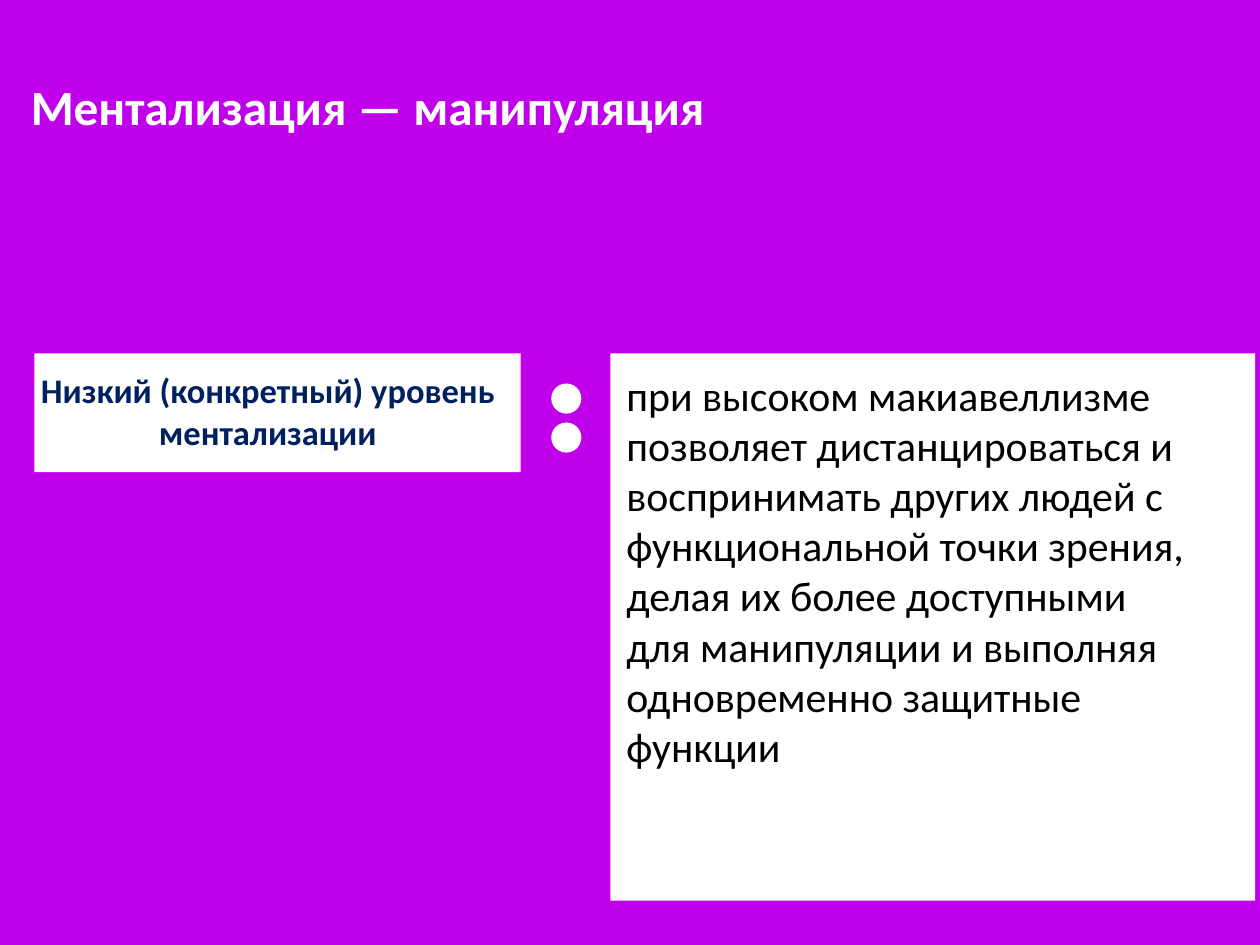
import pptx
import pptx.dml.color
import pptx.enum.shapes
import pptx.enum.text
import pptx.util
from typing import NamedTuple

COLORS = {"back": "C000EB", "white": "FFFFFF", "navy": "002060", "black": "000000"}
WIDTH, HEIGHT = 14.22, 10.67
COLS, ROWS = 128, 96
KIND = pptx.enum.shapes.MSO_SHAPE
ALIGN = pptx.enum.text.PP_ALIGN
ANCHOR = pptx.enum.text.MSO_ANCHOR


class Area(NamedTuple):
    """Place in grid columns and rows."""
    col: float
    row: float
    wide: float
    high: float


class Panel(NamedTuple):
    kind: KIND
    area: Area


class Label(NamedTuple):
    text: str
    area: Area
    size: int
    color: str
    bold: bool = False
    align: ALIGN = ALIGN.LEFT
    anchor: ANCHOR = ANCHOR.TOP
    pitch: float = 1.0


# Panels and the colon of two dots
TOP = 35.9
DOT, STEP = 3.06, 3.96
PANELS = [
    Panel(KIND.RECTANGLE, Area(3.5, TOP, 49.4, 12.06)),
    *(Panel(KIND.OVAL, Area(56, 38.96 + i * STEP, DOT, DOT)) for i in range(2)),
    Panel(KIND.RECTANGLE, Area(62, TOP, 65.5, 55.6)),
]

# Wording
LABELS = [
    Label("Ментализация — манипуляция", Area(2.5, 2.9, 110.9, 16.9), 40, "white",
          bold=True, anchor=ANCHOR.MIDDLE, pitch=0.8),
    Label("Низкий (конкретный) уровень ментализации", Area(2.5, TOP + 1, 49.4, 9.27),
          28, "navy", bold=True, align=ALIGN.CENTER),
    Label("при высоком макиавеллизме позволяет дистанцироваться и воспринимать "
          "других людей с функциональной точки зрения, делая их более доступными "
          "для манипуляции и выполняя одновременно защитные функции",
          Area(63, TOP + 1, 58.5, 51.3), 34, "black"),
]


def color(name: str) -> pptx.dml.color.RGBColor:
    return pptx.dml.color.RGBColor.from_string(COLORS[name])


def place(area: Area) -> tuple:
    across, down = WIDTH / COLS, HEIGHT / ROWS
    return tuple(pptx.util.Inches(n * unit)
                 for n, unit in zip(area, (across, down, across, down)))


def draw_panel(slide: pptx.slide.Slide, panel: Panel) -> None:
    shape = slide.shapes.add_shape(panel.kind, *place(panel.area))
    shape.shadow.inherit = False
    shape.fill.solid()
    shape.fill.fore_color.rgb = color("white")
    shape.line.fill.background()


def draw_label(slide: pptx.slide.Slide, label: Label) -> None:
    frame = slide.shapes.add_textbox(*place(label.area)).text_frame
    frame.word_wrap = True
    frame.vertical_anchor = label.anchor
    inset = pptx.util.Inches(0.07)
    frame.margin_left = frame.margin_right = inset
    frame.margin_top = frame.margin_bottom = inset
    line = frame.paragraphs[0]
    line.text = label.text
    line.alignment = label.align
    line.line_spacing = label.pitch
    line.font.name = "Calibri"
    line.font.size = pptx.util.Pt(label.size)
    line.font.bold = label.bold
    line.font.color.rgb = color(label.color)


def main() -> None:
    deck = pptx.Presentation()
    deck.slide_width = pptx.util.Inches(WIDTH)
    deck.slide_height = pptx.util.Inches(HEIGHT)
    slide = deck.slides.add_slide(deck.slide_layouts[6])
    slide.background.fill.solid()
    slide.background.fill.fore_color.rgb = color("back")
    for panel in PANELS:
        draw_panel(slide, panel)
    for label in LABELS:
        draw_label(slide, label)
    deck.save("out.pptx")


if __name__ == "__main__":
    main()
